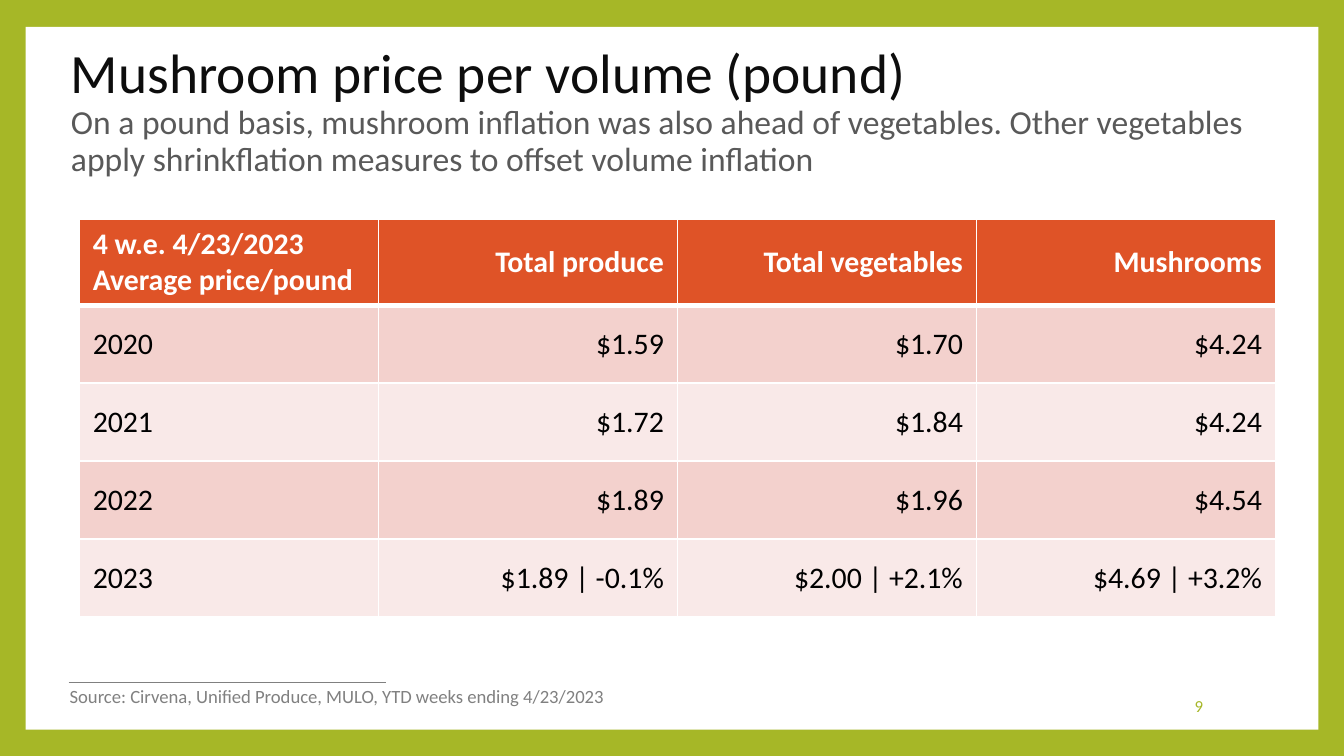
from pptx import Presentation
from pptx.dml.color import RGBColor
from pptx.enum.shapes import MSO_CONNECTOR as Link, MSO_SHAPE as Shape
from pptx.enum.text import MSO_ANCHOR as Anchor, PP_ALIGN as Align
from pptx.oxml.ns import qn
from pptx.util import Inches, Pt
from lxml.etree import SubElement

GREEN = RGBColor(0xA6, 0xB7, 0x27)
WHITE = RGBColor(0xFF, 0xFF, 0xFF)
BLACK = RGBColor(0x00, 0x00, 0x00)
INK = RGBColor(0x0D, 0x0D, 0x0D)
SLATE = RGBColor(0x59, 0x59, 0x59)
GRAY = RGBColor(0x80, 0x80, 0x80)
ORANGE = RGBColor(0xDF, 0x53, 0x27)
ROSE = RGBColor(0xF3, 0xD1, 0xCD)
BLUSH = RGBColor(0xF9, 0xE9, 0xE8)


def write(para, text, size=16, color=BLACK, bold=False, align=Align.LEFT):
    para.alignment = align
    run = para.add_run()
    run.text = text
    font = run.font
    font.name, font.size, font.bold = "Calibri", Pt(size), bold
    font.color.rgb = color


def add_box(left, top, width, height, anchor=Anchor.MIDDLE):
    box = slide.shapes.add_textbox(Inches(left), Inches(top), Inches(width), Inches(height))
    frame = box.text_frame
    frame.word_wrap = True
    frame.vertical_anchor = anchor
    return frame.paragraphs[0]


deck = Presentation()
deck.slide_width, deck.slide_height = Inches(10), Inches(5.625)
slide = deck.slides.add_slide(deck.slide_layouts[6])

# Green frame around a white panel
back = slide.background.fill
back.solid()
back.fore_color.rgb = GREEN
panel = slide.shapes.add_shape(Shape.RECTANGLE, Inches(0.19), Inches(0.2), Inches(9.62), Inches(5.23))
panel.shadow.inherit = False
panel.fill.solid()
panel.fill.fore_color.rgb = WHITE
panel.line.fill.background()

# Rule above the source
rule = slide.shapes.add_connector(Link.STRAIGHT, Inches(0.51), Inches(5.08), Inches(2.87), Inches(5.08))
rule.line.color.rgb = GRAY
rule.line.width = Pt(0.79)
SubElement(rule._element.spPr, qn("a:effectLst"))

# Title and subtitle
title = add_box(0.43, 0.36, 9.43, 0.95)
title.line_spacing = 0.9
write(title, "Mushroom price per volume (pound)", size=29.7, color=INK)
title.add_line_break()
write(title, "On a pound basis, mushroom inflation was also ahead of vegetables. "
      "Other vegetables apply shrinkflation measures to offset volume inflation",
      size=18, color=SLATE)

# Price table
ROWS = [
    ["4 w.e. 4/23/2023\nAverage price/pound", "Total produce", "Total vegetables", "Mushrooms"],
    ["2020", "$1.59", "$1.70", "$4.24"],
    ["2021", "$1.72", "$1.84", "$4.24"],
    ["2022", "$1.89", "$1.96", "$4.54"],
    ["2023", "$1.89 | -0.1%", "$2.00 | +2.1%", "$4.69 | +3.2%"],
]
table = slide.shapes.add_table(len(ROWS), len(ROWS[0]), Inches(0.59), Inches(1.63),
                               Inches(8.9), Inches(2.96)).table
for r, row in enumerate(ROWS):
    head = r == 0
    table.rows[r].height = Inches(0.64 if head else 0.58)
    for c, text in enumerate(row):
        cell = table.cell(r, c)
        cell.vertical_anchor = Anchor.MIDDLE
        for i, part in enumerate(text.split("\n")):
            para = cell.text_frame.add_paragraph() if i else cell.text_frame.paragraphs[0]
            write(para, part, color=WHITE if head else BLACK, bold=head,
                  align=Align.RIGHT if c else Align.LEFT)
        # White borders, thicker between the header and the body
        for side in ("L", "R", "T", "B"):
            thick = (r, side) in ((0, "B"), (1, "T"))
            edge = SubElement(cell._tc.get_or_add_tcPr(), qn(f"a:ln{side}"),
                              w=str(Pt(3 if thick else 1)))
            paint = SubElement(edge, qn("a:solidFill"))
            SubElement(paint, qn("a:srgbClr"), val=str(WHITE))
        cell.fill.solid()
        cell.fill.fore_color.rgb = ORANGE if head else ROSE if r % 2 else BLUSH

# Source and page number
write(add_box(0.42, 5.05, 4.31, 0.27, Anchor.TOP),
      "Source: Cirvena, Unified Produce, MULO, YTD weeks ending 4/23/2023", size=10, color=GRAY)
write(add_box(7.65, 5.1, 1.4, 0.3), "9", size=9, color=GREEN, align=Align.RIGHT)

deck.save("out.pptx")
